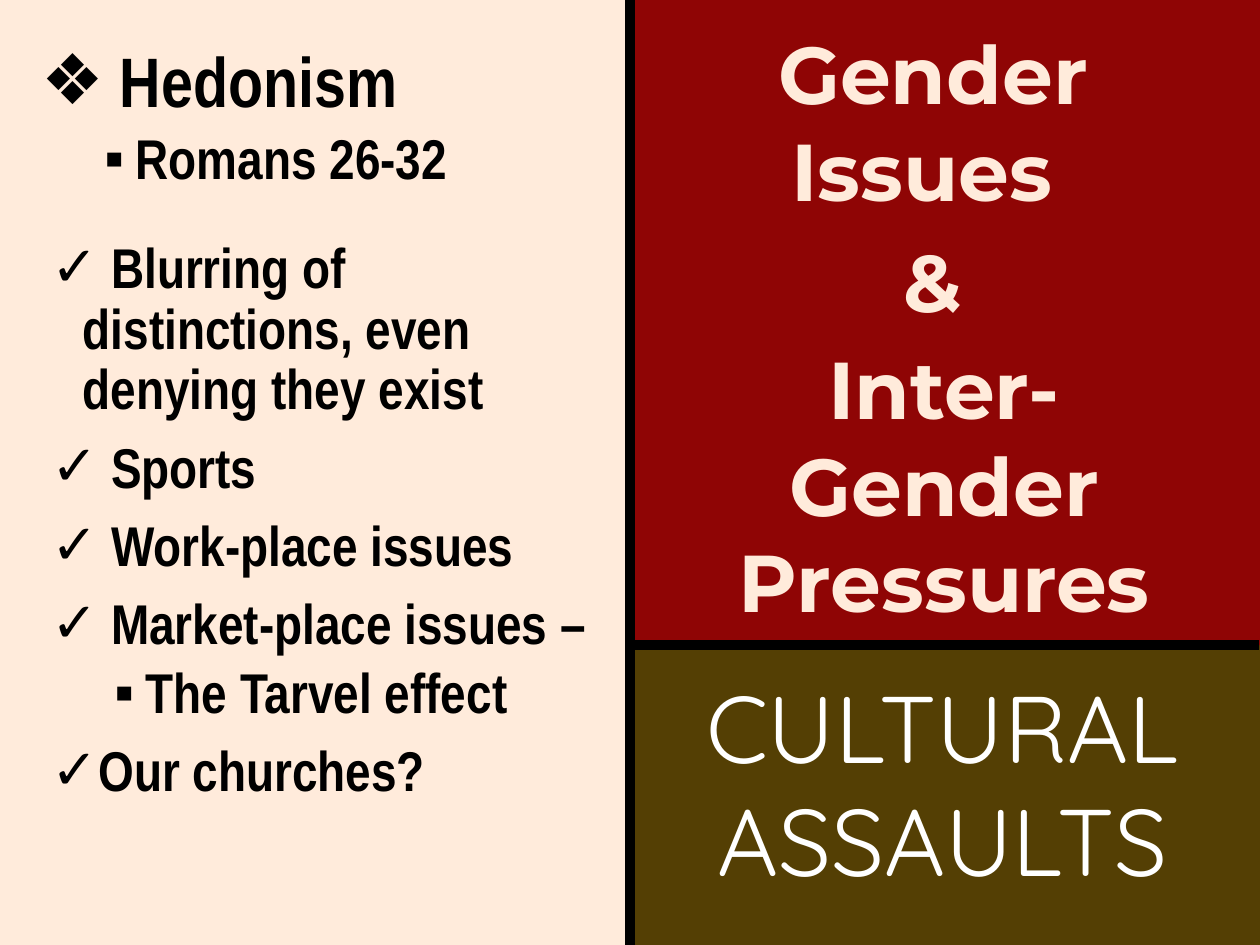
from lxml.etree import SubElement
from pptx import Presentation
from pptx.dml.color import RGBColor
from pptx.enum.shapes import MSO_CONNECTOR as CONN, MSO_SHAPE as SHAPE
from pptx.enum.text import MSO_AUTO_SIZE as FIT, PP_ALIGN as ALIGN
from pptx.oxml.ns import qn
from pptx.util import Inches, Pt

CREAM = RGBColor(0xFF, 0xEB, 0xDB)
RED = RGBColor(0x8F, 0x05, 0x05)
OLIVE = RGBColor(0x54, 0x3F, 0x04)
BLACK = RGBColor(0, 0, 0)
WHITE = RGBColor(0xFF, 0xFF, 0xFF)

CELL = Inches(0.1)
COLS, ROWS = 100, 75
MID_COL, SPLIT_ROW = 50, 51.2
PANEL_COL = MID_COL - 0.1


def grid(*cells):
    """Turn grid counts into lengths."""
    return [round(n * CELL) for n in cells]


def add_panel(slide, top, bottom, color):
    """Fill the right half between two rows."""
    box = grid(PANEL_COL, top, COLS - PANEL_COL, bottom - top)
    sp = slide.shapes.add_shape(SHAPE.RECTANGLE, *box)
    sp.shadow.inherit = False
    sp.fill.solid()
    sp.fill.fore_color.rgb = color
    sp.line.fill.background()


def add_divider(slide, *ends):
    """Draw a thick black line between two grid points."""
    line = slide.shapes.add_connector(CONN.STRAIGHT, *grid(*ends))
    line.line.color.rgb = BLACK
    line.line.width = Pt(6)
    SubElement(line.element.spPr, qn("a:effectLst"))


def add_frame(slide, *box):
    """Add a wrapping text box and return its frame."""
    tf = slide.shapes.add_textbox(*grid(*box)).text_frame
    tf.word_wrap = True
    return tf


def add_paragraph(tf, index, text, font, size, color, bold=True):
    """Write one formatted paragraph and return it."""
    p = tf.add_paragraph() if index else tf.paragraphs[0]
    p.text = text
    f = p.runs[0].font
    f.name, f.size, f.bold, f.color.rgb = font, Pt(size), bold, color
    return p


def add_heading(slide, box, lines, font, size, color, bold=True, after=0):
    """Add centred heading lines."""
    tf = add_frame(slide, *box)
    tf.auto_size = FIT.SHAPE_TO_FIT_TEXT
    for i, text in enumerate(lines):
        p = add_paragraph(tf, i, text, font, size, color, bold)
        p.alignment = ALIGN.CENTER
        p.space_after = Pt(after)


def add_bullets(slide, box, items):
    """Add a list of (level, bullet, size, text) items."""
    tf = add_frame(slide, *box)
    for i, (level, bullet, size, text) in enumerate(items):
        p = add_paragraph(tf, i, text, "Arial Narrow", size, BLACK)
        p.level = level
        p.line_spacing = 0.9
        p.space_before = Pt(5 if level else 10)
        pPr = p._p.get_or_add_pPr()
        pPr.set("marL", str(Inches(0.25 + 0.5 * level)))
        pPr.set("indent", str(Inches(-0.25)))
        SubElement(pPr, qn("a:buFont"), typeface="Arial")
        SubElement(pPr, qn("a:buChar"), char=bullet)


def main():
    """Build the slide."""
    prs = Presentation()
    prs.slide_width, prs.slide_height = grid(COLS, ROWS)
    slide = prs.slides.add_slide(prs.slide_layouts[6])
    slide.background.fill.solid()
    slide.background.fill.fore_color.rgb = CREAM

    add_panel(slide, SPLIT_ROW, ROWS, OLIVE)
    add_panel(slide, 0, SPLIT_ROW, RED)
    add_divider(slide, MID_COL, 0, MID_COL, ROWS)
    add_divider(slide, COLS - 0.1, SPLIT_ROW, PANEL_COL, SPLIT_ROW)

    add_heading(slide, (52.7, 52.6, 44.2, 19.2), ["CULTURAL ASSAULTS"],
                "Quicksand", 54, WHITE, bold=False)
    add_bullets(slide, (2.3, 3.2, 43, 14.1), [
        (0, "❖", 40, " Hedonism"),
        (1, "▪", 32, "Romans 26-32"),
    ])
    add_heading(slide, (52.7, 1.4, 42.7, 16.5), ["Gender Issues "],
                "Montserrat", 46, CREAM, after=6)
    add_bullets(slide, (3.1, 18.6, 45, 54.9), [
        (0, "✓", 32, " Blurring of distinctions, even denying they exist"),
        (0, "✓", 32, " Sports"),
        (0, "✓", 32, " Work-place issues"),
        (0, "✓", 32, " Market-place issues –"),
        (1, "▪", 32, "The Tarvel effect"),
        (0, "✓", 32, "Our churches?"),
    ])
    add_heading(slide, (53.6, 17.9, 42.7, 32.8), ["& ", "Inter-Gender Pressures"],
                "Montserrat", 46, CREAM, after=6)
    prs.save("out.pptx")


if __name__ == "__main__":
    main()
